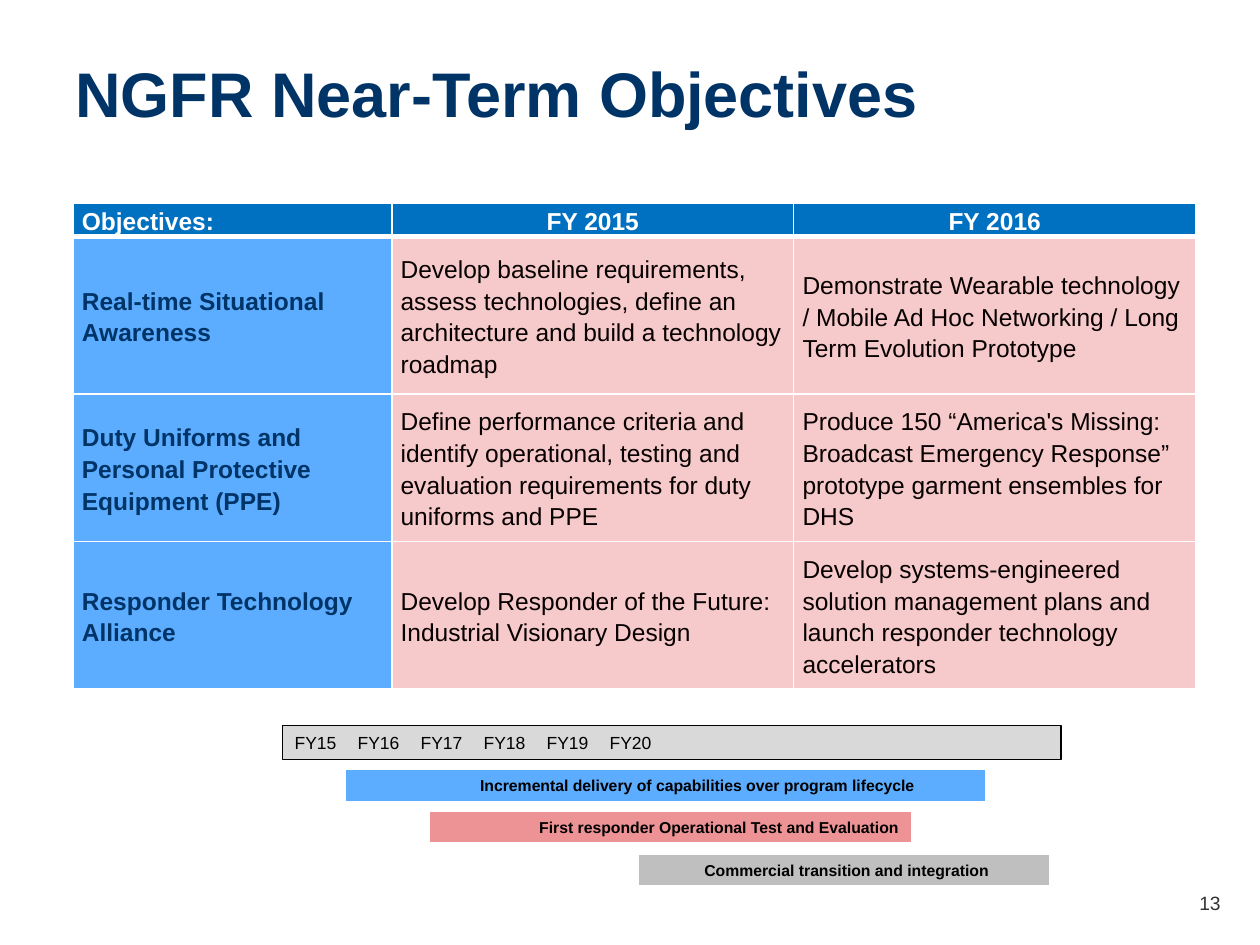
from dataclasses import dataclass

from lxml import etree
from pptx import Presentation
from pptx import util as u
from pptx.dml.color import RGBColor
from pptx.enum import shapes, text
from pptx.oxml.ns import qn

NAVY, INK, WHITE, BLACK = "003366", "070000", "FFFFFF", "000000"
BLUE, PINK, HEAD = "5CADFF", "F6C9CA", "0070C0"
MID, LOW = text.MSO_ANCHOR.MIDDLE, text.MSO_ANCHOR.BOTTOM

WIDTHS = (2.53, 3.19, 3.19)
HEIGHTS = (0.23, 1.25, 1.17, 1.17)
ROWS = (
    ("Objectives:", "FY 2015", "FY 2016"),
    ("Real-time Situational Awareness",
     "Develop baseline requirements, assess technologies, define an "
     "architecture and build a technology roadmap",
     "Demonstrate Wearable technology / Mobile Ad Hoc Networking / "
     "Long Term Evolution Prototype"),
    ("Duty Uniforms and Personal Protective Equipment (PPE)",
     "Define performance criteria and identify operational, testing and "
     "evaluation requirements for duty uniforms and PPE",
     "Produce 150 “America's Missing: Broadcast Emergency Response” "
     "prototype garment ensembles for DHS"),
    ("Responder Technology Alliance",
     "Develop Responder of the Future: Industrial Visionary Design",
     "Develop systems-engineered solution management plans and launch "
     "responder technology accelerators"),
)


@dataclass
class Bar:
    label: str
    left: float
    top: float
    width: float
    height: float
    fill: str
    line: str = WHITE
    inset: float = 0.1
    size: int = 9
    bold: bool = True


BARS = (
    Bar("\t".join(f"FY{year}" for year in range(15, 21)),
        2.24, 5.76, 6.18, 0.27, "D9D9D9", BLACK, size=10, bold=False),
    Bar("Incremental delivery of capabilities over program lifecycle",
        2.74, 6.11, 5.08, 0.25, BLUE, inset=1.07),
    Bar("First responder Operational Test and Evaluation",
        3.41, 6.44, 3.83, 0.25, "EE9395", inset=0.87),
    Bar("Commercial transition and integration",
        5.07, 6.78, 3.26, 0.25, "BFBFBF", inset=0.52),
)


def rgb(code: str) -> RGBColor:
    return RGBColor.from_string(code)


def put(frame, words: str, size: float, color: str, bold: bool = False):
    """Write one paragraph into a text frame and return it."""
    para = frame.paragraphs[0]
    run = para.add_run()
    run.text = words
    form = {"name": "Arial", "size": u.Pt(size), "bold": bold}
    for key, value in form.items():
        setattr(run.font, key, value)
    run.font.color.rgb = rgb(color)
    para.alignment = text.PP_ALIGN.LEFT
    return para


def add_text(slide, words: str, box: tuple, size: float, color: str,
             bold: bool = False) -> None:
    frame = slide.shapes.add_textbox(*map(u.Inches, box)).text_frame
    frame.word_wrap = True
    frame.vertical_anchor = LOW
    put(frame, words, size, color, bold)


def add_bar(slide, bar: Bar) -> None:
    box = map(u.Inches, (bar.left, bar.top, bar.width, bar.height))
    shape = slide.shapes.add_shape(shapes.MSO_SHAPE.RECTANGLE, *box)
    shape.shadow.inherit = False
    shape.fill.solid()
    shape.fill.fore_color.rgb = rgb(bar.fill)
    shape.line.color.rgb = rgb(bar.line)
    shape.line.width = u.Pt(0.75)
    frame = shape.text_frame
    form = {"word_wrap": True, "vertical_anchor": MID,
            "margin_left": u.Inches(bar.inset), "margin_right": 0}
    for key, value in form.items():
        setattr(frame, key, value)
    put(frame, bar.label, bar.size, BLACK, bar.bold)


def edge(cell, row: int) -> None:
    """Draw white cell borders, with a thick rule below the header row."""
    props = cell._tc.get_or_add_tcPr()
    thick = {0: "lnB", 1: "lnT"}.get(row)
    for spot, side in enumerate(("lnL", "lnR", "lnT", "lnB")):
        line = etree.Element(qn(f"a:{side}"))
        line.set("w", str(u.Pt(3 if side == thick else 1)))
        fill = etree.SubElement(line, qn("a:solidFill"))
        etree.SubElement(fill, qn("a:srgbClr")).set("val", WHITE)
        props.insert(spot, line)


def add_grid(slide) -> None:
    box = map(u.Inches, (0.58, 1.61, sum(WIDTHS), sum(HEIGHTS)))
    table = slide.shapes.add_table(len(ROWS), len(WIDTHS), *box).table
    for col, width in zip(table.columns, WIDTHS):
        col.width = u.Inches(width)
    for row, height in zip(table.rows, HEIGHTS):
        row.height = u.Inches(height)
    form = {"vertical_anchor": MID, "margin_left": u.Inches(0.07),
            "margin_right": u.Inches(0.07), "margin_top": 0,
            "margin_bottom": 0}
    for r, row in enumerate(ROWS):
        for c, words in enumerate(row):
            cell = table.cell(r, c)
            for key, value in form.items():
                setattr(cell, key, value)
            if r == 0:
                fill, color = HEAD, WHITE
            else:
                fill, color = (PINK, INK) if c else (BLUE, NAVY)
            cell.fill.solid()
            cell.fill.fore_color.rgb = rgb(fill)
            edge(cell, r)
            para = put(cell.text_frame, words, 14, color, r == 0 or c == 0)
            para.line_spacing = 1.15
            if r == 0 and c:
                para.alignment = text.PP_ALIGN.CENTER


def main() -> None:
    deck = Presentation()
    deck.slide_width, deck.slide_height = u.Inches(10), u.Inches(7.5)
    slide = deck.slides.add_slide(deck.slide_layouts[6])
    add_text(slide, "NGFR Near-Term Objectives", (0.5, 0.25, 9.25, 0.83),
             36, NAVY, True)
    add_text(slide, "13", (9.42, 7.03, 0.5, 0.28), 11, "333333")
    add_grid(slide)
    for bar in BARS:
        add_bar(slide, bar)
    deck.save("out.pptx")


if __name__ == "__main__":
    main()
